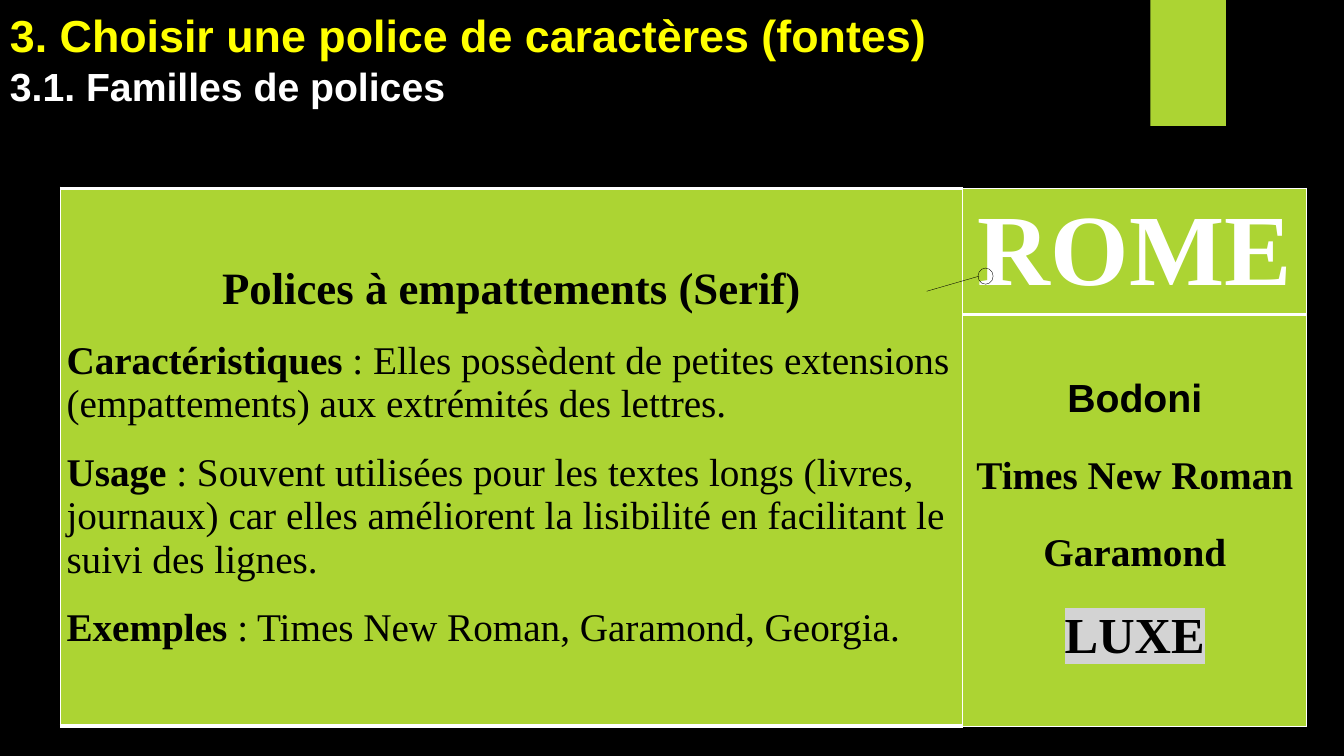
"""Build the slide on serif typefaces: title, accent bar, table and serif callout."""
from lxml import etree
from pptx import Presentation
from pptx.dml.color import RGBColor
from pptx.enum.shapes import MSO_CONNECTOR, MSO_SHAPE
from pptx.enum.text import MSO_ANCHOR, PP_ALIGN
from pptx.oxml.ns import qn
from pptx.util import Inches, Pt

CENTER, LEFT = PP_ALIGN.CENTER, PP_ALIGN.LEFT
MIDDLE, BOTTOM = MSO_ANCHOR.MIDDLE, MSO_ANCHOR.BOTTOM
STRAIGHT = MSO_CONNECTOR.STRAIGHT
OVAL, RECTANGLE = MSO_SHAPE.OVAL, MSO_SHAPE.RECTANGLE
BLACK = RGBColor(0x00, 0x00, 0x00)
WHITE = RGBColor(0xFF, 0xFF, 0xFF)
YELLOW = RGBColor(0xFF, 0xFF, 0x00)
GREEN = RGBColor(0xAC, 0xD4, 0x33)
GREY = RGBColor(0xD3, 0xD3, 0xD3)
SANS, SERIF = "Arial", "Times New Roman"


def add_text(paragraph, text, size, color=BLACK, bold=True, font=SERIF):
    """Append a formatted run to a paragraph and return it."""
    run = paragraph.add_run()
    run.text = text
    run.font.size = Pt(size)
    run.font.bold = bold
    run.font.color.rgb = color
    run.font.name = font
    return run


def style_cell(cell, top, bottom):
    """Give a cell its white borders, green fill, margins and anchor."""
    properties = cell._tc.get_or_add_tcPr()
    for side, width in (("L", 1), ("R", 1), ("T", top), ("B", bottom)):
        border = etree.SubElement(properties, qn(f"a:ln{side}"), w=str(Pt(width)))
        fill = etree.SubElement(border, qn("a:solidFill"))
        etree.SubElement(fill, qn("a:srgbClr"), val=str(WHITE))
    cell.fill.solid()
    cell.fill.fore_color.rgb = GREEN
    cell.margin_left = cell.margin_right = Inches(0.06)
    cell.margin_top = cell.margin_bottom = 0
    cell.vertical_anchor = MIDDLE


presentation = Presentation()
presentation.slide_width = Inches(13.33)
presentation.slide_height = Inches(7.5)
slide = presentation.slides.add_slide(presentation.slide_layouts[6])
slide.background.fill.solid()
slide.background.fill.fore_color.rgb = BLACK

accent_bar = slide.shapes.add_shape(
    RECTANGLE, Inches(11.41), 0, Inches(0.75), Inches(1.25))
accent_bar.shadow.inherit = False
accent_bar.fill.solid()
accent_bar.fill.fore_color.rgb = GREEN
accent_bar.line.fill.background()

title = slide.shapes.add_textbox(0, Inches(0.49), Inches(12.95), Inches(0.64))
title.text_frame.word_wrap = True
title.text_frame.vertical_anchor = BOTTOM
heading = title.text_frame.paragraphs[0]
add_text(heading, "3. Choisir une police de caractères (fontes)", 32, YELLOW, font=SANS)
heading.add_line_break()
add_text(heading, "3.1. Familles de polices", 28, WHITE, font=SANS)

COLUMNS, ROWS = (8.95, 3.41), (1.25, 3.65)
table = slide.shapes.add_table(
    len(ROWS), len(COLUMNS), Inches(0.6), Inches(1.87),
    Inches(sum(COLUMNS)), Inches(sum(ROWS))).table
table.first_row = table.horz_banding = False
for column, width in zip(table.columns, COLUMNS):
    column.width = Inches(width)
for row, height in zip(table.rows, ROWS):
    row.height = Inches(height)

description, sample, examples = table.cell(0, 0), table.cell(0, 1), table.cell(1, 1)
for cell, top, bottom in (
        (description, 3, 3), (table.cell(1, 0), 3, 3), (sample, 1, 3), (examples, 3, 1)):
    style_cell(cell, top, bottom)
description.merge(table.cell(1, 0))

paragraph = description.text_frame.paragraphs[0]
paragraph.alignment = CENTER
add_text(paragraph, "Polices à empattements (Serif)", 32)
for label, detail in (
        ("Caractéristiques ", ": Elles possèdent de petites extensions "
         "(empattements) aux extrémités des lettres."),
        ("Usage ", ": Souvent utilisées pour les textes longs (livres, journaux) "
         "car elles améliorent la lisibilité en facilitant le suivi des lignes."),
        ("Exemples ", ": Times New Roman, Garamond, Georgia.")):
    paragraph = description.text_frame.add_paragraph()
    paragraph.alignment = LEFT
    paragraph.space_before = Pt(18)
    add_text(paragraph, label, 28)
    add_text(paragraph, detail, 28, bold=False)

paragraph = sample.text_frame.paragraphs[0]
paragraph.alignment = CENTER
add_text(paragraph, "ROME", 72, WHITE)

paragraph = examples.text_frame.paragraphs[0]
paragraph.alignment = CENTER
add_text(paragraph, "Bodoni", 28, font=SANS)
for name, size in (("Times New Roman", 28), ("Garamond", 28), ("LUXE", 36)):
    paragraph = examples.text_frame.add_paragraph()
    paragraph.alignment = CENTER
    paragraph.space_before = Pt(24)
    run = add_text(paragraph, name, size)
highlight = etree.Element(qn("a:highlight"))
etree.SubElement(highlight, qn("a:srgbClr"), val=str(GREY))
run.font._element.find(qn("a:solidFill")).addnext(highlight)

pointer = slide.shapes.add_connector(
    STRAIGHT, Inches(9.19), Inches(2.89), Inches(9.71), Inches(2.74))
etree.SubElement(pointer._element.spPr, qn("a:effectLst"))
serif_ring = slide.shapes.add_shape(
    OVAL, Inches(9.7), Inches(2.66), Inches(0.15), Inches(0.16))
serif_ring.shadow.inherit = False
serif_ring.fill.background()
for mark in (pointer, serif_ring):
    mark.line.color.rgb = BLACK
    mark.line.width = Pt(0.25)

presentation.save("out.pptx")
